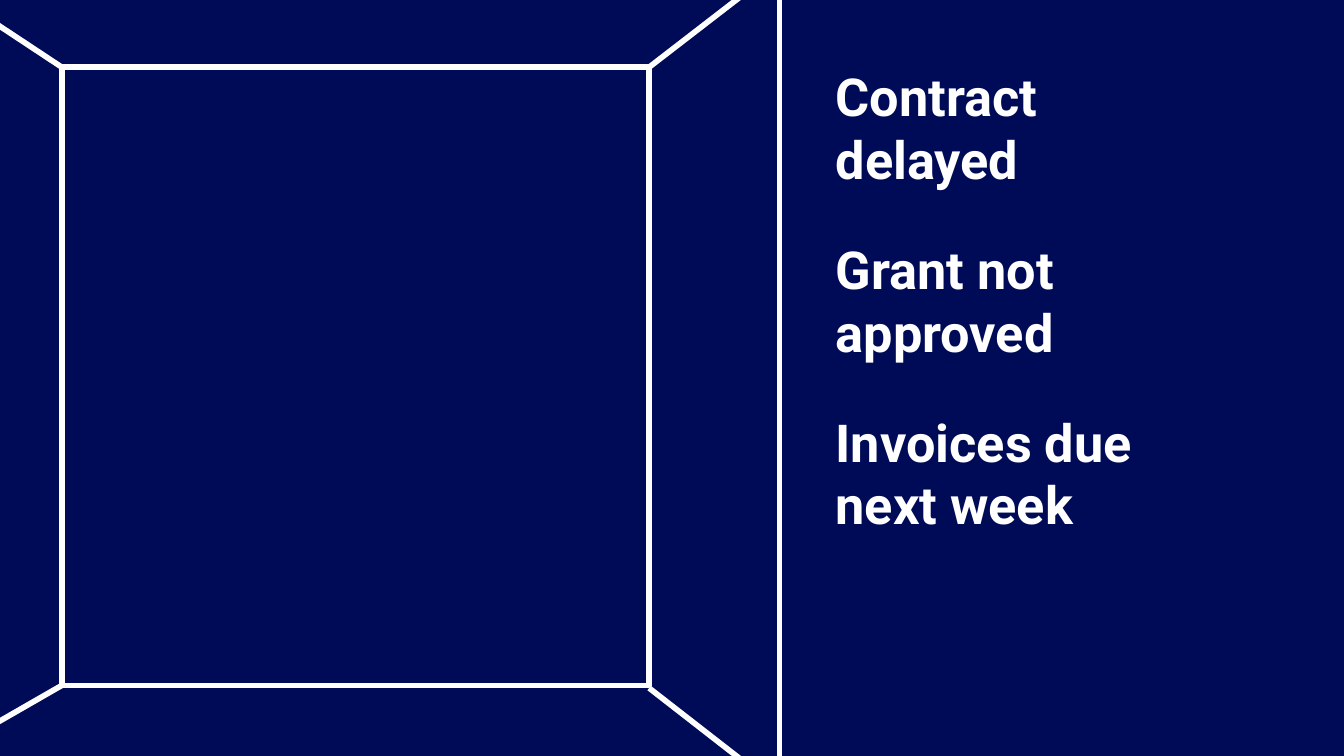
"""Build a slide with an empty room in perspective beside three worries."""
from dataclasses import dataclass

from lxml import etree
from pptx import Presentation
from pptx.dml.color import RGBColor
from pptx.enum.shapes import MSO_CONNECTOR, MSO_SHAPE
from pptx.enum.text import MSO_AUTO_SIZE
from pptx.oxml.ns import qn
from pptx.util import Emu, Pt

RECT = MSO_SHAPE.RECTANGLE
LINE = MSO_CONNECTOR.STRAIGHT
GROW = MSO_AUTO_SIZE.SHAPE_TO_FIT_TEXT


@dataclass(frozen=True)
class Theme:
    navy: RGBColor = RGBColor(0x00, 0x0B, 0x58)
    white: RGBColor = RGBColor(0xFF, 0xFF, 0xFF)
    font: str = "Roboto"
    size: Pt = Pt(28)
    stroke: Pt = Pt(3)


THEME = Theme()
SCALE = 4572
SIZE = (2000, 1125)
WALL = (92, 100, 874, 920)
EDGES = [
    (1290, -150, 966, 100),
    (-286, -150, 92, 100),
    (-416, 1312, 92, 1020),
    (1290, 1276, 966, 1024),
    (1160, -36, 1160, 1156),
]
NOTES = ["Contract delayed", "Grant not approved", "Invoices due next week"]
NOTE = (1224, 86, 618, 208)
STEP = 257


def px(*nums):
    return [Emu(num * SCALE) for num in nums]


def ink(line):
    line.color.rgb = THEME.white
    line.width = THEME.stroke


def add_rect(slide, box):
    rect = slide.shapes.add_shape(RECT, *px(*box))
    rect.shadow.inherit = False
    return rect


def add_edge(slide, ends):
    edge = slide.shapes.add_connector(LINE, *px(*ends))
    ink(edge.line)
    etree.SubElement(edge._element.spPr, qn("a:effectLst"))


def add_note(slide, text, row):
    left, top, width, height = NOTE
    box = slide.shapes.add_textbox(*px(left, top + row * STEP, width, height))
    frame = box.text_frame
    frame.word_wrap = True
    frame.auto_size = GROW
    frame.text = text
    font = frame.paragraphs[0].font
    font.name = THEME.font
    font.size = THEME.size
    font.bold = True
    font.color.rgb = THEME.white


def main():
    deck = Presentation()
    deck.slide_width, deck.slide_height = px(*SIZE)
    slide = deck.slides.add_slide(deck.slide_layouts[6])

    back = add_rect(slide, (0, 0, *SIZE))
    back.fill.solid()
    back.fill.fore_color.rgb = THEME.navy
    back.line.fill.background()

    wall = add_rect(slide, WALL)
    wall.fill.background()
    ink(wall.line)

    for ends in EDGES:
        add_edge(slide, ends)
    for row, text in enumerate(NOTES):
        add_note(slide, text, row)

    deck.save("out.pptx")


if __name__ == "__main__":
    main()
